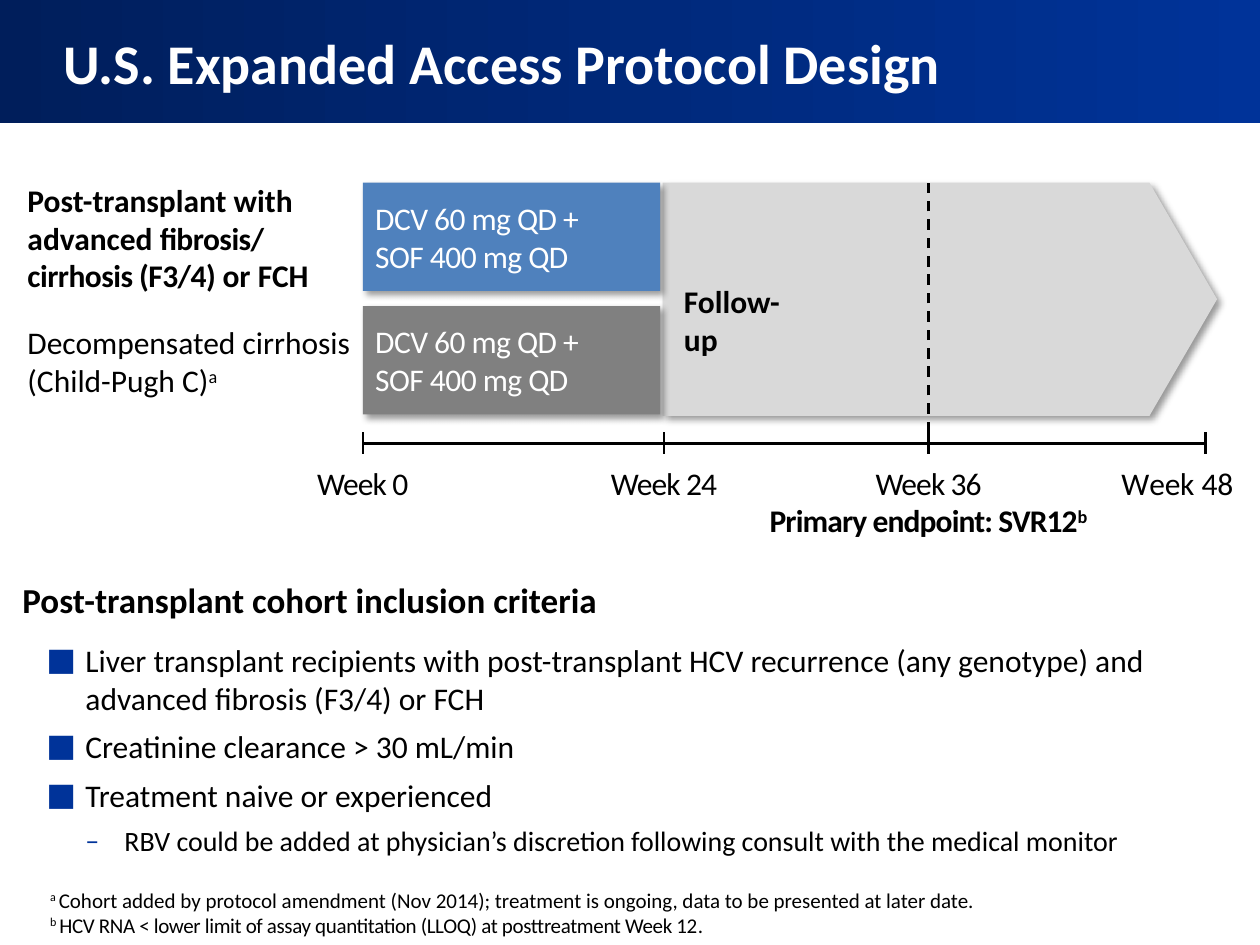
import pptx
import pptx.util
import pptx.dml.color
import pptx.enum.dml
import pptx.enum.shapes
import pptx.enum.text
import pptx.oxml

RGB = pptx.dml.color.RGBColor
NAVY, ROYAL = RGB(0x00, 0x1E, 0x5B), RGB(0x00, 0x33, 0x99)
BLUE, GRAY = RGB(0x4F, 0x81, 0xBD), RGB(0x80, 0x80, 0x80)
PALE = RGB(0xD9, 0xD9, 0xD9)
BLACK, WHITE = RGB(0, 0, 0), RGB(255, 255, 255)

KIND = pptx.enum.shapes.MSO_SHAPE
ALIGN = pptx.enum.text.PP_ALIGN
MID = pptx.enum.text.MSO_ANCHOR.MIDDLE
LOW = pptx.enum.text.MSO_ANCHOR.BOTTOM
Pt = pptx.util.Pt
NS = 'xmlns:a="http://schemas.openxmlformats.org/drawingml/2006/main"'

deck = pptx.Presentation()
deck.slide_width, deck.slide_height = pptx.util.Inches(10), pptx.util.Inches(7.5)
COL, ROW = deck.slide_width / 10, deck.slide_height / 7.5
slide = deck.slides.add_slide(deck.slide_layouts[5])
shapes = slide.shapes


def grid(x, y, w, h):
    """Turn columns and rows into slide lengths."""
    return [int(x * COL), int(y * ROW), int(w * COL), int(h * ROW)]


def write(shape, lines, size, color=BLACK, bold=False, align=ALIGN.LEFT, **frame):
    """Fill a shape with lines; each line is a list of (text, run XML values)."""
    text = shape.text_frame
    base = {"word_wrap": True, "auto_size": pptx.enum.text.MSO_AUTO_SIZE.NONE}
    for key, val in {**base, **frame}.items():
        setattr(text, key, val)
    for i, line in enumerate(lines):
        para = text.paragraphs[0] if i == 0 else text.add_paragraph()
        para.alignment = align
        for words, extra in line:
            run = para.add_run()
            run.text = words
            for key, val in {"name": "Calibri", "size": Pt(size), "bold": bold}.items():
                setattr(run.font, key, val)
            run.font.color.rgb = color
            for key, val in extra.items():
                run._r.get_or_add_rPr().set(key, val)


SUP = {"baseline": "30000"}
TIGHT, SNUG = {"spc": "-50"}, {"spc": "-30"}
FLUSH = dict.fromkeys(("margin_left", "margin_top", "margin_right", "margin_bottom"), 0)

# Title band
title = shapes.title
title.left, title.top, title.width, title.height = grid(0, 0, 10, 0.98)
title.fill.gradient()
title.fill.gradient_angle = 0
for stop, tone in zip(title.fill.gradient_stops, (NAVY, ROYAL)):
    stop.color.rgb = tone
write(title, [[("U.S. Expanded Access Protocol Design", {})]], 32, WHITE, True,
      vertical_anchor=MID, margin_left=int(0.5 * COL), margin_right=int(0.43 * COL))

# Treatment arms and follow-up arrow
START, TOP = 2.88, 1.45
dose = [[("DCV 60 mg QD +", SNUG)], [("SOF 400 mg QD", SNUG)]]
arms = [
    (KIND.PENTAGON, (5.26, TOP, 4.4, 1.85), PALE, []),
    (KIND.RECTANGLE, (START, TOP, 2.36, 0.86), BLUE, dose),
    (KIND.RECTANGLE, (START, TOP + 0.98, 2.36, 0.86), GRAY, dose),
]
for kind, spot, tone, lines in arms:
    arm = shapes.add_shape(kind, *grid(*spot))
    if kind == KIND.PENTAGON:
        arm.adjustments[0] = 0.29
    arm.fill.solid()
    arm.fill.fore_color.rgb = tone
    arm.line.fill.background()
    arm._element.spPr.append(pptx.oxml.parse_xml(
        f'<a:effectLst {NS}><a:outerShdw blurRad="{Pt(4)}" dist="{Pt(3)}" '
        'dir="2700000" algn="tl" rotWithShape="0"><a:srgbClr val="000000">'
        '<a:alpha val="40000"/></a:srgbClr></a:outerShdw></a:effectLst>'))
    write(arm, lines, 18, WHITE, vertical_anchor=MID, margin_top=0, margin_bottom=0)

# Time axis, ticks and endpoint marker
weeks = [START, 5.27, 7.37, 9.57]
AXIS, HIGH, DEEP = 3.52, 3.43, 3.6
rules = [(START, AXIS, weeks[-1], AXIS, False)]
rules += [(x, DEEP, x, HIGH, False) for x in weeks]
rules += [(weeks[2], HIGH, weeks[2], TOP, True)]
for *ends, dash in rules:
    rule = shapes.add_connector(pptx.enum.shapes.MSO_CONNECTOR.STRAIGHT, *grid(*ends))
    rule.line.color.rgb = BLACK
    rule.line.width = Pt(1.5)
    if dash:
        rule.line.dash_style = pptx.enum.dml.MSO_LINE.DASH
    rule._element.spPr.append(pptx.oxml.parse_xml(f"<a:effectLst {NS}/>"))

# Week labels
for name, x, wide in zip((0, 24, 36), weeks, (1.5, 1.64, 3.04)):
    label = shapes.add_textbox(*grid(x - wide / 2, 3.68, wide, 0.6))
    write(label, [[(f"Week {name}", TIGHT)]], 18, align=ALIGN.CENTER, **FLUSH)
point = label.text_frame.add_paragraph()
point.alignment = ALIGN.CENTER
for words, extra in (("Primary endpoint: SVR12", TIGHT), ("b", {**TIGHT, **SUP})):
    run = point.add_run()
    run.text = words
    for key, val in {"name": "Calibri", "size": Pt(18), "bold": True}.items():
        setattr(run.font, key, val)
    run.font.color.rgb = BLACK
    for key, val in extra.items():
        run._r.get_or_add_rPr().set(key, val)
last = shapes.add_textbox(*grid(8.86, 3.68, 1.16, 0.6))
write(last, [[("W", TIGHT), ("eek ", {"spc": "-10"}), ("48", {})]], 18,
      align=ALIGN.RIGHT, **{**FLUSH, "margin_right": int(0.23 * COL)})

# Cohort names, follow-up label and footnotes
notes = [
    ((0.12, 1.38, 2.76, 1.01), 18, True, {"vertical_anchor": MID},
     [[("Post-transplant with", {})],
      [("advanced ", {}), ("fibrosis/ cirrhosis (F3/4) ", SNUG), ("or FCH", {})]]),
    ((0.12, 2.51, 3.36, 0.71), 18, False, {"vertical_anchor": MID},
     [[("Decompensated cirrhosis", {})], [("(Child-Pugh C)", {}), ("a", SUP)]]),
    ((5.33, 2.19, 1.1, 0.7), 18, True, {}, [[("Follow-up", {})]]),
    ((0.3, 6.99, 9.22, 0.5), 12, False, {"vertical_anchor": LOW},
     [[("a ", SUP), ("Cohort added by protocol amendment (Nov 2014); treatment is "
                     "ongoing, data to be presented at later date.", {})],
      [("b ", SUP), ("HCV RNA < lower limit of assay quantitation (LLOQ) at "
                     "posttreatment Week 12", {"spc": "-20"}), (".", {})]]),
]
for spot, size, bold, frame, lines in notes:
    write(shapes.add_textbox(*grid(*spot)), lines, size, bold=bold, **frame)

# Inclusion criteria: text, size, space after, left indent, bullet
rows = [
    ("Post-transplant cohort inclusion criteria", 20, 12, 0, ""),
    ("Liver transplant recipients with post-transplant HCV recurrence "
     "(any genotype) and advanced fibrosis (F3/4) or FCH", 18, 6, 0.5, "■"),
    ("Creatinine clearance > 30 mL/min", 18, 6, 0.5, "■"),
    ("Treatment naive or experienced", 18, 6, 0.5, "■"),
    ("RBV could be added at physician’s discretion following consult with "
     "the medical monitor", 16, 6, 0.81, "–"),
]
body = shapes.add_textbox(*grid(0.08, 4.54, 9.5, 1.97))
write(body, [[(row[0], {})] for row in rows], 18)
for para, (words, size, after, left, mark) in zip(body.text_frame.paragraphs, rows):
    para.space_after = Pt(after)
    para.level = int(mark == "–")
    para.runs[0].font.size = Pt(size)
    para.runs[0].font.bold = not mark
    if mark:
        props = para._p.get_or_add_pPr()
        props.set("marL", str(int(left * COL)))
        props.set("indent", str(int(-0.31 * COL)))
        for part in (f'<a:buClr {NS}><a:srgbClr val="{ROYAL}"/></a:buClr>',
                     f'<a:buFont {NS} typeface="Calibri"/>',
                     f'<a:buChar {NS} char="{mark}"/>'):
            props.append(pptx.oxml.parse_xml(part))

deck.save("out.pptx")
